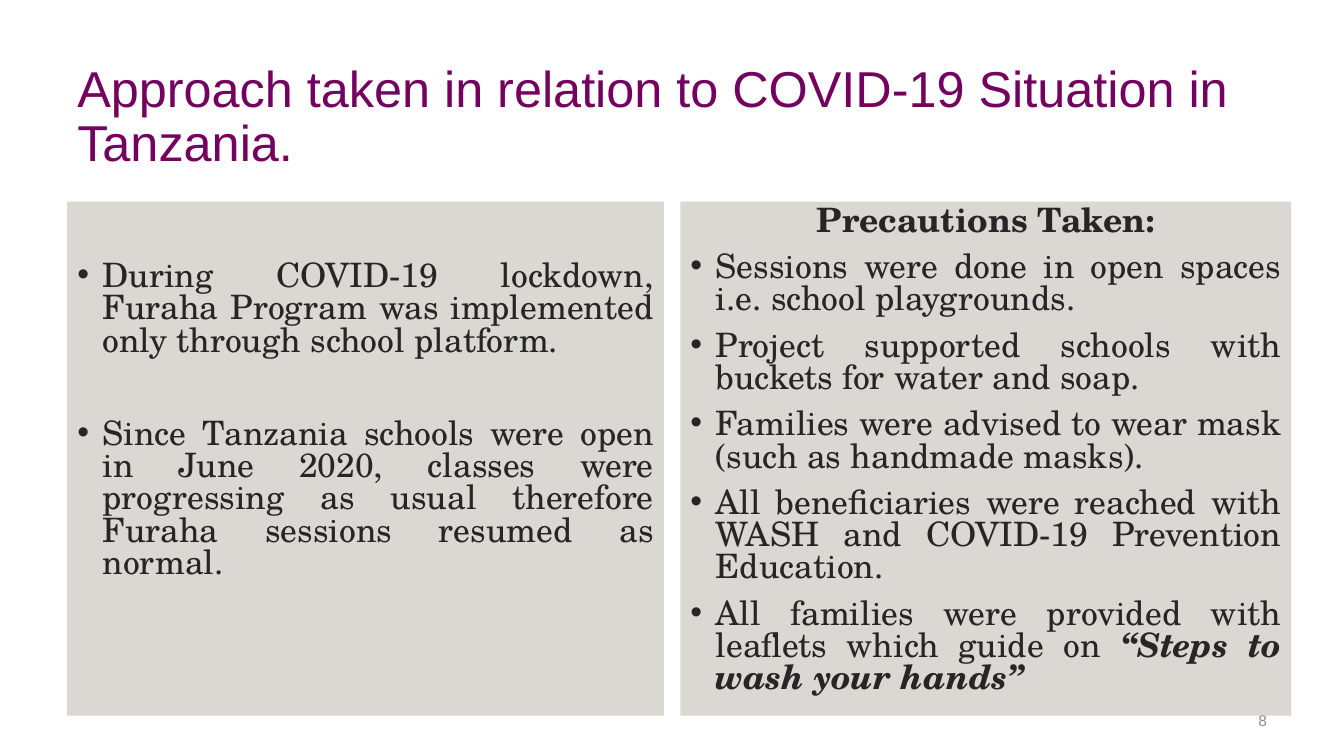
"""Build a slide on the approach to the COVID-19 situation in Tanzania."""
import pptx
import pptx.util
import pptx.dml.color
import pptx.enum.text
import pptx.oxml
import pptx.oxml.ns

Pt = pptx.util.Pt
ALIGN = pptx.enum.text.PP_ALIGN
ANCHOR = pptx.enum.text.MSO_ANCHOR
HUES = {"title": "74005F", "panel": "DBD7D3", "text": "262626", "page": "8C8C8C"}
SERIF = "TeX Gyre Schola"
SANS = "Arial"
PANEL_TOP, PANEL_TALL = 144, 367.2

LEFT = [
    "During COVID-19 lockdown, Furaha Program was implemented only through school platform.",
    "Since Tanzania schools were open in June 2020, classes were progressing as usual "
    "therefore Furaha sessions resumed as normal.",
]
RIGHT = [
    "Sessions were done in open spaces i.e. school playgrounds.",
    "Project supported schools with buckets for water and soap.",
    "Families were advised to wear mask (such as handmade masks).",
    "All beneficiaries were reached with WASH and COVID-19 Prevention Education.",
    "All families were provided with leaflets which guide on ",
]
STEPS = "“Steps to wash your hands”"


def color(name):
    """Return a named colour."""
    return pptx.dml.color.RGBColor.from_string(HUES[name])


def place(shape, box):
    """Move a shape to the box, given as left, top, width and height."""
    shape.left, shape.top, shape.width, shape.height = map(Pt, box)


def style(font, name, size, hue):
    """Set the face, size and colour of a font."""
    font.name, font.size = name, Pt(size)
    font.color.rgb = color(hue)


def mark(para, char, indent):
    """Give a paragraph a bullet and hanging indent, or neither."""
    props = para._p.get_or_add_pPr()
    props.set("marL", str(Pt(indent)))
    props.set("indent", str(-Pt(indent)))
    tag = "a:buChar" if char else "a:buNone"
    node = pptx.oxml.parse_xml(f"<{tag} {pptx.oxml.ns.nsdecls('a')}/>")
    if char:
        node.set("char", char)
    props.append(node)


def label(shape, box, text, look, align, anchor, line=1.0):
    """Fill a shape with one styled line of text."""
    place(shape, box)
    frame = shape.text_frame
    frame.word_wrap = True
    frame.auto_size = pptx.enum.text.MSO_AUTO_SIZE.NONE
    frame.vertical_anchor = anchor
    para = frame.paragraphs[0]
    para.text = text
    para.alignment, para.line_spacing = align, line
    style(para.font, *look)


def panel(shape, box, items, head=None, inset=3.6, gap=10):
    """Fill a grey panel with a bullet list under an optional heading."""
    place(shape, box)
    shape.fill.solid()
    shape.fill.fore_color.rgb = color("panel")
    frame = shape.text_frame
    frame.word_wrap = True
    frame.auto_size = pptx.enum.text.MSO_AUTO_SIZE.NONE
    frame.vertical_anchor = ANCHOR.TOP
    frame.margin_top = Pt(inset)
    lines = ([head] if head else []) + items
    for i, text in enumerate(lines):
        para = frame.add_paragraph() if i else frame.paragraphs[0]
        para.text = text
        top = text == head
        mark(para, "" if top else "•", 0 if top else 18)
        para.alignment = ALIGN.CENTER if top else ALIGN.JUSTIFY
        para.line_spacing = 0.8
        para.space_before = Pt(gap if i else 0)
        style(para.font, SERIF, 24, "text")
        para.font.bold = top
    return para


def build(deck):
    """Add the slide with its title, two panels and page number."""
    slide = deck.slides.add_slide(deck.slide_layouts[3])
    title, left, right = list(slide.placeholders)[:3]
    label(title, (48, 39.6, 864, 90),
          "Approach taken in relation to COVID-19 Situation in Tanzania.",
          (SANS, 36, "title"), ALIGN.LEFT, ANCHOR.MIDDLE, 0.9)
    panel(left, (48, PANEL_TOP, 426.2, PANEL_TALL), LEFT, inset=43, gap=43.5)
    last = panel(right, (486, PANEL_TOP, 436.3, PANEL_TALL), RIGHT, "Precautions Taken:")
    steps = last.add_run()
    steps.text = STEPS
    steps.font.bold = steps.font.italic = True
    page = slide.shapes.add_textbox(0, 0, 0, 0)
    label(page, (816, 500.4, 96, 28.8), "8", (SANS, 11, "page"),
          ALIGN.RIGHT, ANCHOR.MIDDLE)


def main():
    """Make the deck and save it."""
    deck = pptx.Presentation()
    deck.slide_width, deck.slide_height = Pt(960), Pt(540)
    build(deck)
    deck.save("out.pptx")


if __name__ == "__main__":
    main()
